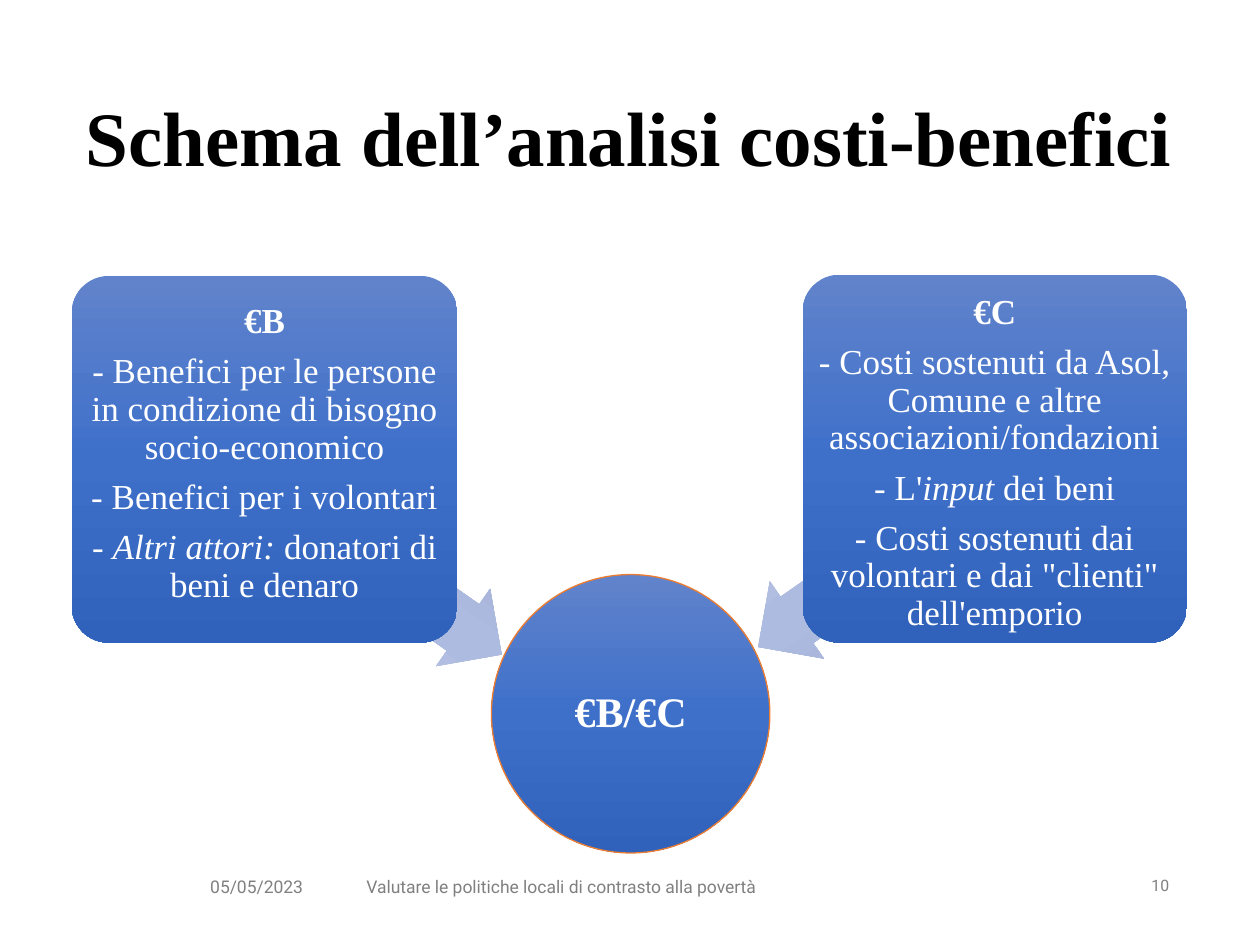
from dataclasses import dataclass
from lxml import etree
from pptx import Presentation
from pptx.dml.color import RGBColor as RGB
from pptx.enum.shapes import MSO_SHAPE as Kind
from pptx.enum.text import MSO_ANCHOR as Anchor, MSO_AUTO_SIZE as Fit, PP_ALIGN as Align
from pptx.oxml.ns import qn
from pptx.util import Inches, Pt


@dataclass(frozen=True)
class Theme:
    serif: str = "Times New Roman"
    sans: str = "Roboto"
    ink: str = "000000"
    white: str = "FFFFFF"
    grey: str = "808080"
    edge: str = "ED7D31"
    blue: tuple = ("6183CB", "3E70CA", "3062BB")
    pale: tuple = ("BBC5E3", "AEBBE0", "98A4CB")
    title: int = 44
    ratio: int = 24
    body: int = 20
    foot: int = 10
    page: int = 9


T = Theme()


def style(para, face, size, color, bold=False):
    font = para.font
    font.name, font.size, font.bold = face, Pt(size), bold
    font.color.rgb = RGB.from_string(color)


def shade(shape, colors):
    """Fill with evenly spaced colours from top to bottom."""
    shape.shadow.inherit = False
    shape.line.fill.background()
    shape.fill.gradient()
    shape.fill.gradient_angle = 270
    stops = shape._element.spPr.find(qn("a:gradFill")).find(qn("a:gsLst"))
    for stop in list(stops):
        stops.remove(stop)
    for i, color in enumerate(colors):
        stop = etree.SubElement(stops, qn("a:gs"), pos=str(100000 * i // (len(colors) - 1)))
        etree.SubElement(stop, qn("a:srgbClr"), val=color)


def add_form(slide, kind, box, colors):
    shape = slide.shapes.add_shape(kind, *map(Inches, box))
    shade(shape, colors)
    return shape


def add_text(slide, box, lines, size, inset):
    """Centred white text; the first line is bold, *stars* mark italics."""
    frame = slide.shapes.add_textbox(*map(Inches, box)).text_frame
    frame.word_wrap = True
    frame.vertical_anchor = Anchor.MIDDLE
    frame.margin_left = frame.margin_right = Inches(inset)
    frame.margin_top = frame.margin_bottom = Inches(inset)
    for i, line in enumerate(lines):
        para = frame.add_paragraph() if i else frame.paragraphs[0]
        para.alignment, para.line_spacing = Align.CENTER, 0.9
        para.space_after = Pt(0.35 * size)
        style(para, T.serif, size, T.white, bold=i == 0)
        for j, part in enumerate(line.split("*")):
            run = para.add_run()
            run.text = part
            if j % 2:
                run.font.italic = True


def add_title(slide, box, text):
    title = slide.shapes.title
    title.left, title.top, title.width, title.height = map(Inches, box)
    frame = title.text_frame
    frame.text = text
    frame.auto_size = Fit.NONE
    frame.vertical_anchor = Anchor.MIDDLE
    para = frame.paragraphs[0]
    para.alignment, para.line_spacing = Align.CENTER, 0.9
    style(para, T.serif, T.title, T.ink, bold=True)


def add_ratio(slide, box, text):
    x, y, w, h = box
    disc = add_form(slide, Kind.OVAL, box, T.blue)
    disc.line.color.rgb = RGB.from_string(T.edge)
    disc.line.width = Pt(0.75)
    pad = 0.33
    add_text(slide, (x + pad, y + pad, w - 2 * pad, h - 2 * pad), [text], T.ratio, 0.02)


def add_arrow(slide, box, turn):
    arrow = add_form(slide, Kind.LEFT_ARROW, box, T.pale)
    arrow.adjustments[0], arrow.adjustments[1] = 0.6, 0.5
    arrow.rotation = turn


def add_card(slide, box, lines, shift):
    x, y, w, h = box
    card = add_form(slide, Kind.ROUNDED_RECTANGLE, box, T.blue)
    card.adjustments[0] = 0.1
    pad = 0.09
    add_text(slide, (x + pad, y + pad + shift, w - 2 * pad, h - 2 * pad), lines, T.body, 0.01)


def add_foot(slide, box, parts):
    x, y, h = box
    for dx, w, text, size in parts:
        area = slide.shapes.add_textbox(*map(Inches, (x + dx, y, w, h)))
        frame = area.text_frame
        frame.word_wrap = True
        frame.text = text
        style(frame.paragraphs[0], T.sans, size, T.grey)


def main():
    deck = Presentation()
    deck.slide_width, deck.slide_height = Inches(10), Inches(7.5)
    slide = deck.slides.add_slide(deck.slide_layouts[5])

    add_title(slide, (0.5, 0.4, 8.99, 1.45), "Schema dell’analisi costi-benefici")

    # Ratio at the centre
    add_ratio(slide, (3.9, 4.56, 2.21, 2.21), "€B/€C")

    # Benefits
    add_arrow(slide, (1.89, 4.16, 2.3, 0.75), 215)
    add_card(slide, (0.57, 2.19, 3.06, 2.91), [
        "€B",
        "- Benefici per le persone in condizione di bisogno socio-economico",
        "- Benefici per i volontari",
        "- *Altri attori: *donatori di beni e denaro",
    ], -0.04)

    # Costs
    add_arrow(slide, (5.81, 4.1, 2.3, 0.75), 325)
    add_card(slide, (6.37, 2.18, 3.05, 2.92), [
        "€C",
        "- Costi sostenuti da Asol, Comune e altre associazioni/fondazioni",
        "- L'*input* dei beni",
        "- Costi sostenuti dai volontari e dai \"clienti\" dell'emporio",
    ], 0.04)

    # Footer
    add_foot(slide, (1.57, 6.9, 0.4), [
        (0, 1.02, "05/05/2023", T.foot),
        (1.24, 5.66, "Valutare le politiche locali di contrasto alla povertà", T.foot),
        (7.47, 0.46, "10", T.page),
    ])
    deck.save("out.pptx")


if __name__ == "__main__":
    main()
